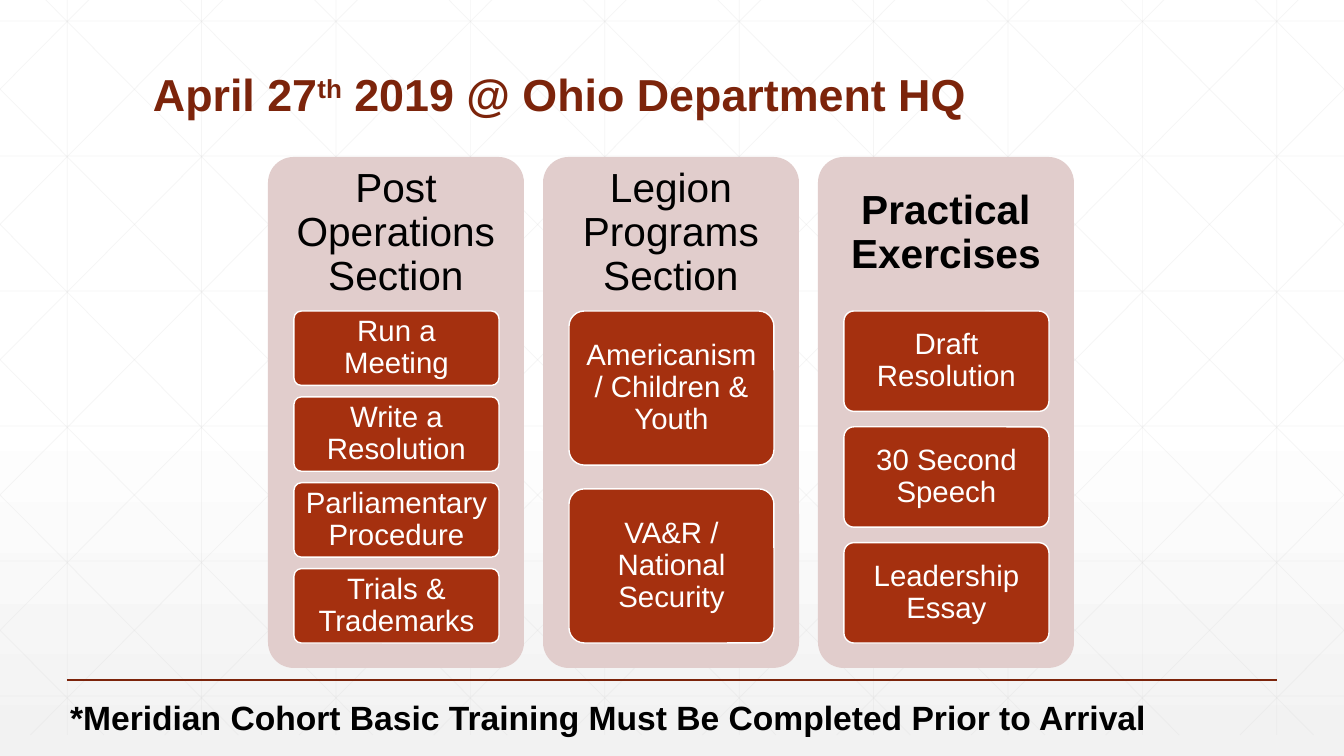
from pptx import Presentation
from pptx import util as u
from pptx.dml.color import RGBColor
from pptx.enum import shapes, text
from pptx.oxml import ns
from lxml import etree

TITLE = [("April 27", 0), ("th", 30000), (" 2019 @ Ohio Department HQ", 0)]
FOOTNOTE = [("*Meridian Cohort Basic Training Must Be Completed Prior to Arrival", 0)]
SECTIONS = [
    ("Post Operations Section", False,
     ["Run a Meeting", "Write a Resolution", "Parliamentary Procedure", "Trials & Trademarks"]),
    ("Legion Programs Section", False,
     ["Americanism / Children & Youth", "VA&R / National Security"]),
    ("Practical Exercises", True,
     ["Draft Resolution", "30 Second Speech", "Leadership Essay"]),
]
THEME = {
    "font": "Arial", "title": "7C240B", "rule": "7C240B", "grid": "D9D9D9",
    "panel": "E1CDCC", "topic": "A5300F", "light": "FFFFFF", "dark": "000000",
    "fade": "F2F2F2", "title_size": 32, "heading_size": 29, "topic_size": 21, "note_size": 24,
}
WIDTH, HEIGHT = 1344, 756
EMU_PER_PX = 914400 / 100.8
GRID_TOP, GRID_BOTTOM, GRID_RUN = -21, 735, 751
PANEL_LEFT, PANEL_TOP, PANEL_PITCH, PANEL_W, PANEL_H = 268, 157, 275, 256, 511
TOPIC_INDENT, TOPIC_TOP, TOPIC_W, TOPICS_H, GAP_RATIO = 26, 311, 205, 332, 0.154


def px(value):
    return u.Emu(round(value * EMU_PER_PX))


def rgb(name):
    return RGBColor.from_string(THEME[name])


def apply(target, formats):
    for name, value in formats.items():
        setattr(target, name, value)


def write(shape, runs, size, color, bold, insets, wrap=True, spacing=0.9,
          align=text.PP_ALIGN.CENTER, anchor=text.MSO_ANCHOR.MIDDLE):
    frame = shape.text_frame
    sides = ("margin_left", "margin_top", "margin_right", "margin_bottom")
    apply(frame, {"word_wrap": wrap, "vertical_anchor": anchor,
                  **{side: px(inset) for side, inset in zip(sides, insets)}})
    paragraph = frame.paragraphs[0]
    apply(paragraph, {"alignment": align, "line_spacing": spacing})
    for words, baseline in runs:
        run = paragraph.add_run()
        run.text = words
        apply(run.font, {"name": THEME["font"], "size": u.Pt(THEME[size]), "bold": bold})
        run.font.color.rgb = rgb(color)
        if baseline:
            run._r.get_or_add_rPr().set("baseline", str(baseline))


def add_line(slide, start, end, color, weight, opacity=None):
    line = slide.shapes.add_connector(shapes.MSO_CONNECTOR.STRAIGHT, *map(px, (*start, *end)))
    line.line.color.rgb = rgb(color)
    line.line.width = u.Pt(weight)
    properties = line._element.spPr
    etree.SubElement(properties, ns.qn("a:effectLst"))
    if opacity:
        tint = properties.find(".//" + ns.qn("a:srgbClr"))
        etree.SubElement(tint, ns.qn("a:alpha")).set("val", str(opacity * 1000))


def add_card(slide, box, fill, border=None):
    card = slide.shapes.add_shape(shapes.MSO_SHAPE.ROUNDED_RECTANGLE, *map(px, box))
    card.adjustments[0] = 0.1
    card.shadow.inherit = False
    card.fill.solid()
    card.fill.fore_color.rgb = rgb(fill)
    if border:
        card.line.color.rgb = rgb(border)
        card.line.width = u.Pt(1)
    else:
        card.line.fill.background()
    return card


def add_backdrop(slide):
    fill = slide.background.fill
    fill.gradient()
    fill.gradient_angle = 270
    for stop, position, color in zip(fill.gradient_stops, (0.53, 1), ("light", "fade")):
        stop.position = position
        stop.color.rgb = rgb(color)

    grid = []
    for column in range(10):
        x = WIDTH * (2 * column + 1) / 20
        grid.append(((x, GRID_TOP), (x, GRID_BOTTOM)))
    for row in range(6):
        y = 21 + 135 * row
        grid.append(((0, y), (WIDTH, y)))
    slope = (GRID_BOTTOM - GRID_TOP) / GRID_RUN
    diagonals = []
    for step in range(-5, 10):
        start = 25 + WIDTH * step / 10
        ends = [max(0, start), min(WIDTH, start + GRID_RUN)]
        diagonals.append([(x, GRID_TOP + (x - start) * slope) for x in ends])
    grid += diagonals
    grid += [[(WIDTH - x, y) for x, y in diagonal] for diagonal in diagonals]
    for start, end in grid:
        add_line(slide, start, end, "grid", 0.5, 25)
    add_line(slide, (67, 680), (1277, 680), "rule", 1)


def add_sections(slide):
    for column, (heading, bold, topics) in enumerate(SECTIONS):
        left = PANEL_LEFT + column * PANEL_PITCH
        panel = add_card(slide, (left, PANEL_TOP, PANEL_W, PANEL_H), "panel")
        write(panel, [(heading, 0)], "heading_size", "dark", bold, (5, 0, 5, 358))
        topic_h = TOPICS_H / (len(topics) + (len(topics) - 1) * GAP_RATIO)
        for row, topic in enumerate(topics):
            top = TOPIC_TOP + row * topic_h * (1 + GAP_RATIO)
            card = add_card(slide, (left + TOPIC_INDENT, top, TOPIC_W, topic_h), "topic", "light")
            write(card, [(topic, 0)], "topic_size", "light", False, (6, 4, 6, 4))


def main():
    deck = Presentation()
    apply(deck, {"slide_width": px(WIDTH), "slide_height": px(HEIGHT)})
    slide = deck.slides.add_slide(deck.slide_layouts[6])
    add_backdrop(slide)
    add_sections(slide)
    title = slide.shapes.add_textbox(*map(px, (143, 67, 1058, 60)))
    write(title, TITLE, "title_size", "title", True, (10, 5, 10, 5), align=text.PP_ALIGN.LEFT)
    footnote = slide.shapes.add_textbox(*map(px, (60, 692, 1151, 50)))
    write(footnote, FOOTNOTE, "note_size", "dark", True, (10, 5, 10, 5), wrap=False,
          spacing=1.0, align=text.PP_ALIGN.LEFT, anchor=text.MSO_ANCHOR.TOP)
    deck.save("out.pptx")


if __name__ == "__main__":
    main()
